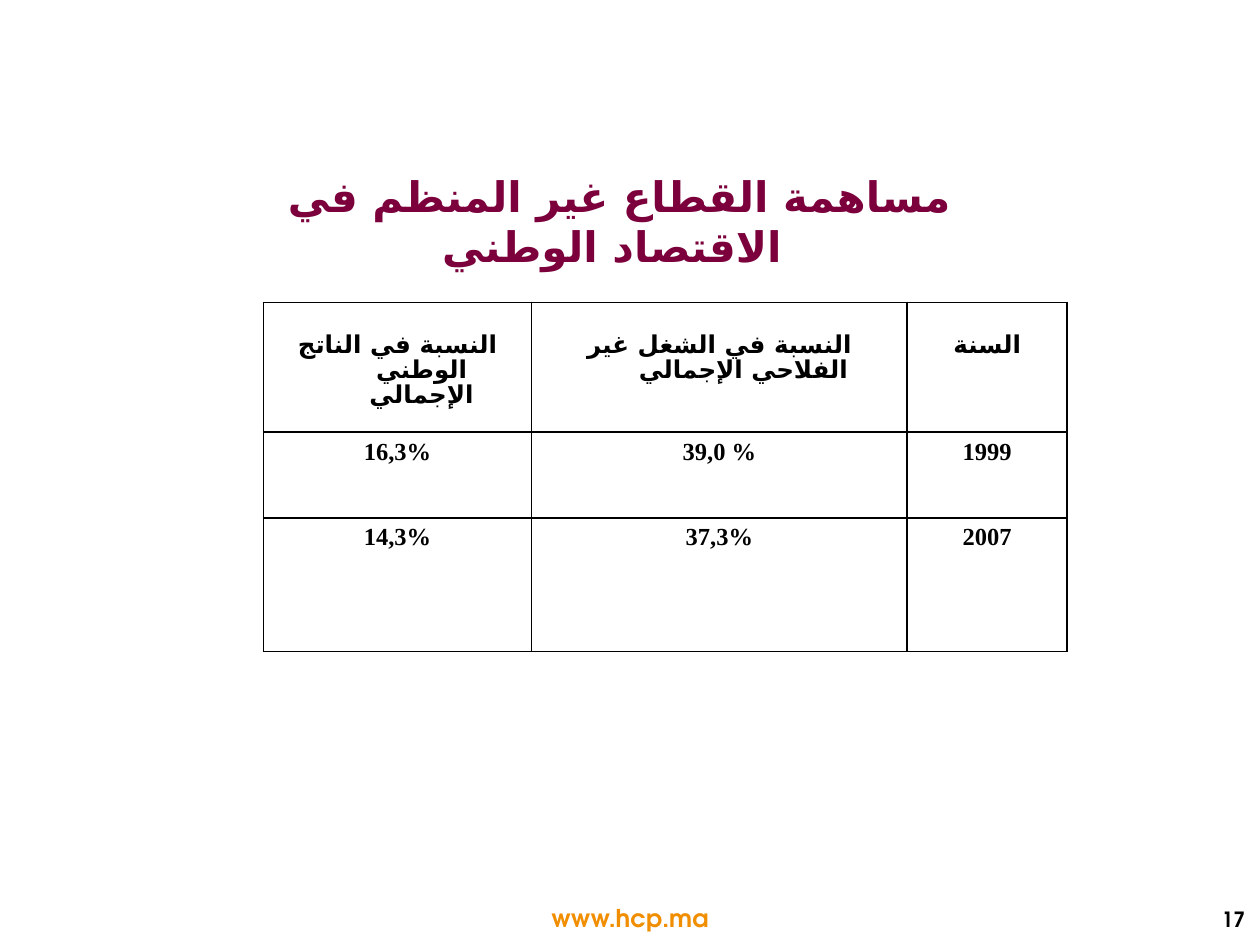
from lxml.etree import SubElement
from pptx import Presentation
from pptx.dml.color import RGBColor
from pptx.enum.text import MSO_ANCHOR, MSO_AUTO_SIZE, PP_ALIGN
from pptx.oxml.ns import qn
from pptx.util import Inches, Pt


def color(value):
    return RGBColor.from_string(value)


def write(para, text, size, font, tint, align):
    para.alignment = align
    span = para.add_run()
    span.text = text
    look = {"size": Pt(size), "name": font, "bold": True}
    for name, value in look.items():
        setattr(span.font, name, value)
    span.font.color.rgb = color(tint)
    SubElement(span.font._element, qn("a:cs"), typeface="DejaVu Sans")


deck = Presentation()
deck.slide_width = Inches(10)
deck.slide_height = Inches(7.5)
page = deck.slides.add_slide(deck.slide_layouts[6])

center, right = PP_ALIGN.CENTER, PP_ALIGN.RIGHT
top, middle = MSO_ANCHOR.TOP, MSO_ANCHOR.MIDDLE
display = "TeX Gyre Adventor"
grow, fixed = MSO_AUTO_SIZE.SHAPE_TO_FIT_TEXT, MSO_AUTO_SIZE.NONE
texts = [
    ((3.82, 7.12, 2.36, 0.33), "www.hcp.ma", 14, display, "F18E00", center, top, grow),
    ((8.46, 7.12, 1.52, 0.35), "17", 12, display, "000000", right, middle, fixed),
    ((2.16, 1.3, 5.51, 0.51), "مساهمة القطاع غير المنظم في الاقتصاد الوطني ",
     24, "Roboto", "7B003B", center, top, grow),
]
for place, text, size, font, tint, align, anchor, fit in texts:
    box = page.shapes.add_textbox(*map(Inches, place))
    frame = {"word_wrap": True, "auto_size": fit, "vertical_anchor": anchor}
    for name, value in frame.items():
        setattr(box.text_frame, name, value)
    write(box.text_frame.paragraphs[0], text, size, font, tint, align)

rows = [
    ["النسبة في الناتج الوطني الإجمالي", "النسبة في الشغل غير الفلاحي الإجمالي", "السنة"],
    ["16,3%", "39,0 %", "1999"],
    ["14,3%", "37,3%", "2007"],
]
widths = [2.13, 2.98, 1.27]
heights = [1.03, 0.68, 1.06]
table = page.shapes.add_table(
    len(rows), len(widths), Inches(2.09), Inches(2.4),
    Inches(sum(widths)), Inches(sum(heights))).table
for column, width in zip(table.columns, widths):
    column.width = Inches(width)
for row, height in zip(table.rows, heights):
    row.height = Inches(height)

for row_index, values in enumerate(rows):
    for column_index, text in enumerate(values):
        cell = table.cell(row_index, column_index)
        para = cell.text_frame.paragraphs[0]
        write(para, text, 14, "Times New Roman", "000000", center)
        indent = para._p.get_or_add_pPr()
        indent.set("marL", str(Inches(0.38)))
        indent.set("indent", str(Inches(-0.38)))
        if row_index == 0:
            cell.margin_top = Inches(0.25)
            para.line_spacing = 0.86
        properties = cell._tc.get_or_add_tcPr()
        for side in ("lnL", "lnR", "lnT", "lnB"):
            line = SubElement(properties, qn(f"a:{side}"), w=str(Pt(1)))
            paint = SubElement(line, qn("a:solidFill"))
            SubElement(paint, qn("a:srgbClr"), val="000000")
        cell.fill.background()

deck.save("out.pptx")
